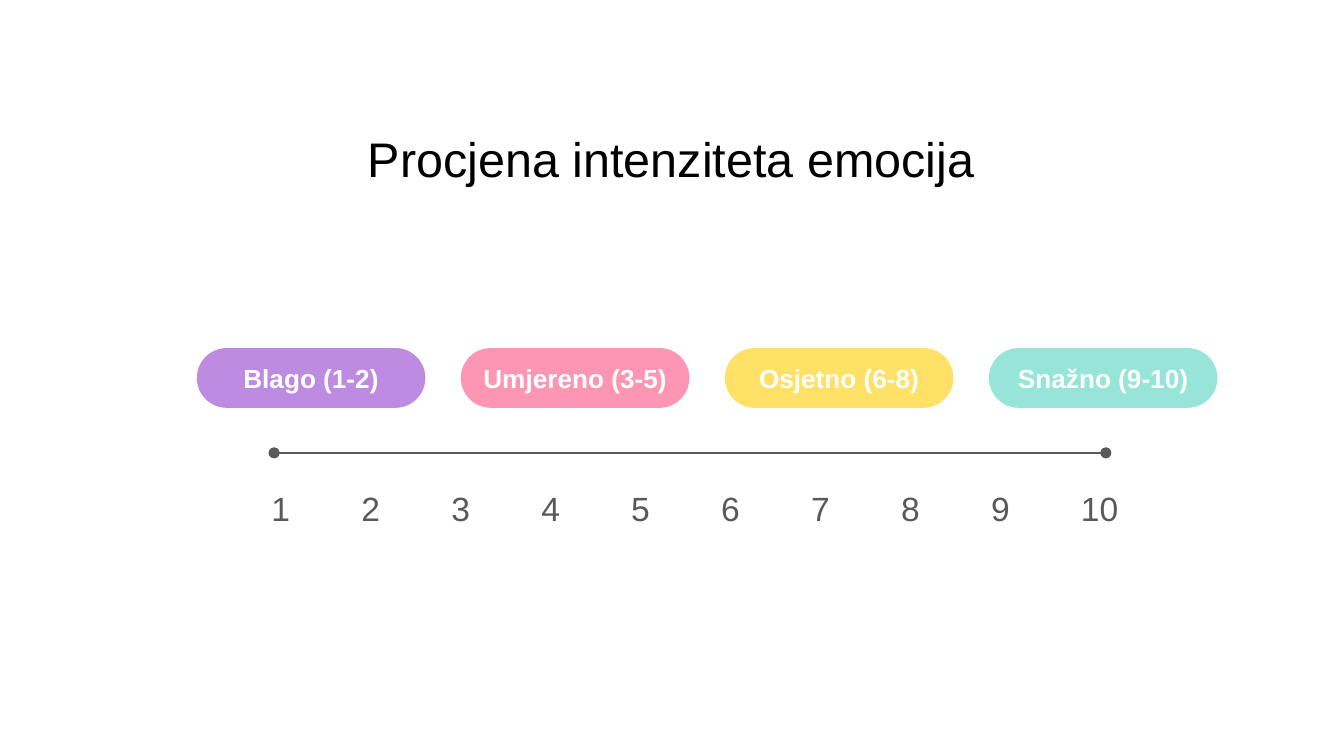
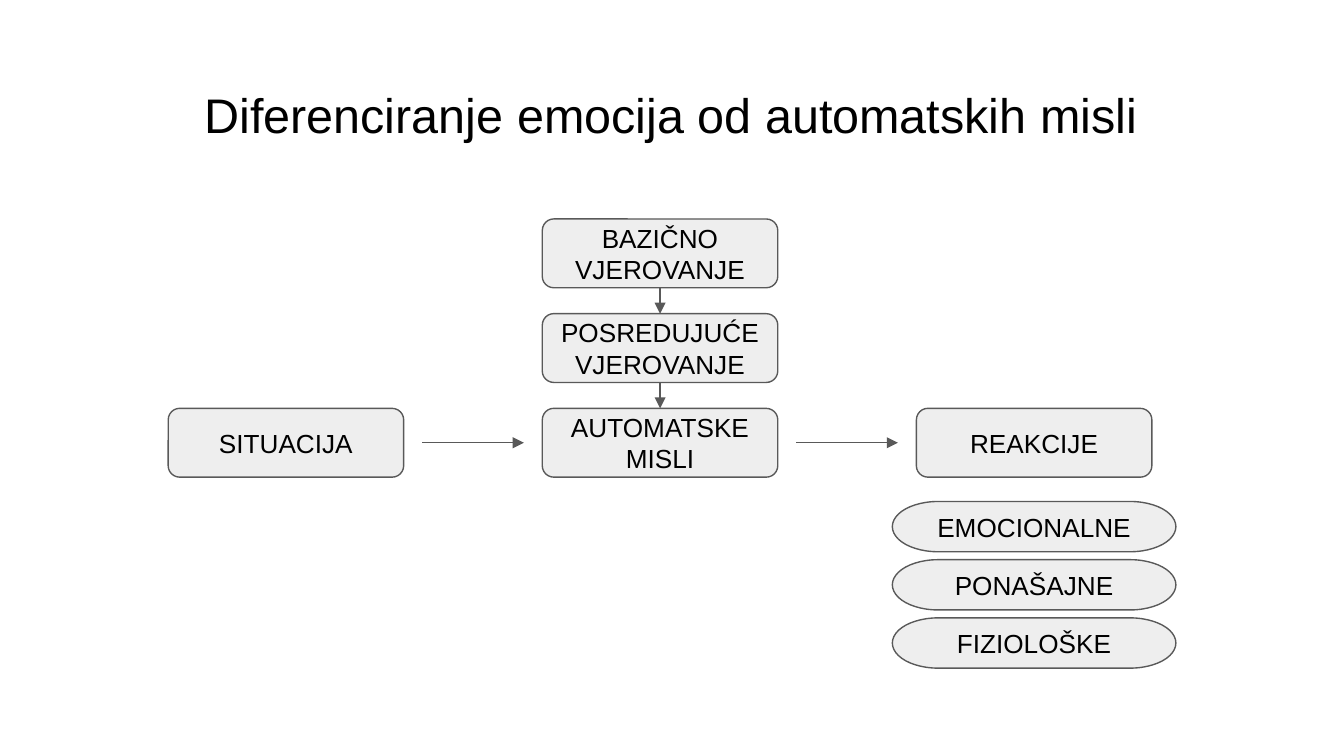
from dataclasses import dataclass

from lxml.etree import SubElement
from pptx import Presentation
from pptx.dml.color import RGBColor
from pptx.enum.shapes import MSO_CONNECTOR, MSO_SHAPE
from pptx.enum.text import MSO_ANCHOR, MSO_AUTO_SIZE, PP_ALIGN
from pptx.oxml.ns import qn
from pptx.util import Cm, Pt


@dataclass(frozen=True)
class Theme:
    font: str = "Arial"
    title_size: int = 26
    label_size: int = 14
    scale_size: int = 18
    line_width: float = 0.75
    inset: float = 0.25
    pill_inset: float = 0.13
    ink: str = "000000"
    light: str = "FFFFFF"
    grey: str = "595959"
    panel: str = "EEEEEE"
    mild: str = "BE8BE2"
    moderate: str = "FC96B2"
    marked: str = "FEE166"
    strong: str = "96E5D8"


THEME = Theme()


def color(value):
    return RGBColor.from_string(value)


def write(shape, text, size, ink, align=PP_ALIGN.CENTER, anchor=MSO_ANCHOR.MIDDLE,
          bold=False, vertical_inset=THEME.inset):
    frame = shape.text_frame
    frame.word_wrap = True
    frame.auto_size = MSO_AUTO_SIZE.NONE
    frame.vertical_anchor = anchor
    frame.margin_left = frame.margin_right = Cm(THEME.inset)
    frame.margin_top = frame.margin_bottom = Cm(vertical_inset)
    para = frame.paragraphs[0]
    para.text = text
    para.alignment = align
    para.font.name = THEME.font
    para.font.size = Pt(size)
    para.font.bold = bold
    para.font.color.rgb = color(ink)


def add_page(deck, title, left, top, width, height, anchor):
    page = deck.slides.add_slide(deck.slide_layouts[5])
    heading = page.shapes.title
    heading.left, heading.top = Cm(left), Cm(top)
    heading.width, heading.height = Cm(width), Cm(height)
    write(heading, title, THEME.title_size, THEME.ink, anchor=anchor)
    return page


def add_shape(page, kind, left, top, width, height, fill):
    shape = page.shapes.add_shape(kind, Cm(left), Cm(top), Cm(width), Cm(height))
    shape.shadow.inherit = False
    shape.fill.solid()
    shape.fill.fore_color.rgb = color(fill)
    return shape


def add_pill(page, text, left, top, width, height, fill):
    pill = add_shape(page, MSO_SHAPE.ROUNDED_RECTANGLE, left, top, width, height, fill)
    pill.adjustments[0] = 0.5
    pill.line.fill.background()
    write(pill, text, THEME.label_size, THEME.light, bold=True,
          vertical_inset=THEME.pill_inset)


def add_node(page, kind, text, left, top, width, height):
    node = add_shape(page, kind, left, top, width, height, THEME.panel)
    node.line.color.rgb = color(THEME.grey)
    node.line.width = Pt(THEME.line_width)
    write(node, text, THEME.label_size, THEME.ink)
    return node


def add_number(page, number, left, top, width, height):
    box = page.shapes.add_textbox(Cm(left), Cm(top), Cm(width), Cm(height))
    write(box, str(number), THEME.scale_size, THEME.grey, PP_ALIGN.LEFT, MSO_ANCHOR.TOP)


def add_line(page, start_x, start_y, end_x, end_y, head=None, tail=None):
    line = page.shapes.add_connector(
        MSO_CONNECTOR.STRAIGHT, Cm(start_x), Cm(start_y), Cm(end_x), Cm(end_y))
    line.line.color.rgb = color(THEME.grey)
    line.line.width = Pt(THEME.line_width)
    outline = line.line._get_or_add_ln()
    for tag, style in (("a:headEnd", head), ("a:tailEnd", tail)):
        if style:
            SubElement(outline, qn(tag)).set("type", style)
    SubElement(line._element.spPr, qn("a:effectLst"))
    return line


def build_intensity(deck):
    page = add_page(deck, "Procjena intenziteta emocija",
                    0.86, 2.13, 23.67, 1.65, MSO_ANCHOR.BOTTOM)
    levels = (
        ("Blago (1-2)", THEME.mild),
        ("Umjereno (3-5)", THEME.moderate),
        ("Osjetno (6-8)", THEME.marked),
        ("Snažno (9-10)", THEME.strong),
    )
    for index, (label, fill) in enumerate(levels):
        add_pill(page, label, 3.72 + 4.99 * index, 6.58, 4.32, 1.13, fill)
    add_line(page, 5.18, 8.56, 20.9, 8.56, head="oval", tail="oval")
    for number in range(1, 11):
        width = 1.15 if number < 10 else 1.65
        add_number(page, number, 4.88 + 1.7 * (number - 1), 8.97, width, 1.19)


def build_thoughts(deck):
    page = add_page(deck, "Diferenciranje emocija od automatskih misli",
                    1.14, 1.35, 23.11, 1.63, MSO_ANCHOR.TOP)
    width, height, gap = 4.45, 1.3, 0.35
    columns = [3.18 + 7.07 * index for index in range(3)]
    rows = [4.14 + 1.79 * index for index in range(3)]

    def add_step(text, column, row):
        return add_node(page, MSO_SHAPE.ROUNDED_RECTANGLE, text,
                        columns[column], rows[row], width, height)

    add_step("SITUACIJA", 0, 2)
    beliefs = [add_step(text, 1, row) for row, text in enumerate(
        ("BAZIČNO VJEROVANJE", "POSREDUJUĆE VJEROVANJE", "AUTOMATSKE MISLI"))]
    add_step("REAKCIJE", 2, 2)

    middle = rows[2] + height / 2
    for left, right in zip(columns, columns[1:]):
        add_line(page, left + width + gap, middle, right - gap, middle, tail="triangle")

    center = columns[1] + width / 2
    for index in range(2):
        arrow = add_line(page, center, rows[index] + height, center, rows[index + 1],
                         tail="triangle")
        arrow.begin_connect(beliefs[index], 2)
        arrow.end_connect(beliefs[index + 1], 0)

    reaction_width = 5.36
    reaction_left = columns[2] + (width - reaction_width) / 2
    for index, text in enumerate(("EMOCIONALNE", "PONAŠAJNE", "FIZIOLOŠKE")):
        add_node(page, MSO_SHAPE.FLOWCHART_TERMINATOR, text,
                 reaction_left, 9.48 + 1.1 * index, reaction_width, 0.95)


def main():
    deck = Presentation()
    deck.slide_width, deck.slide_height = Cm(25.4), Cm(14.29)
    build_intensity(deck)
    build_thoughts(deck)
    deck.save("out.pptx")


if __name__ == "__main__":
    main()
